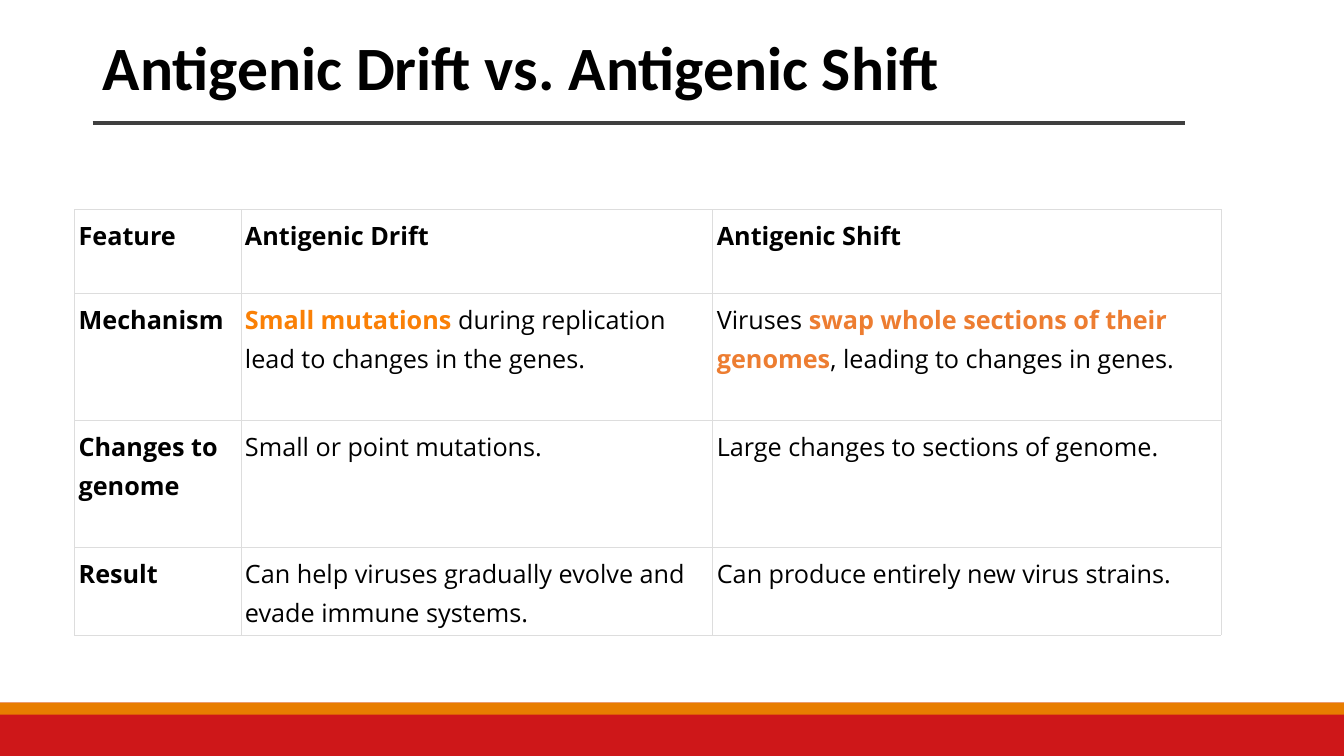
import pptx
import pptx.dml.color
import pptx.enum.shapes
import pptx.enum.text
import pptx.oxml.ns
import pptx.util
from lxml import etree

Inches, Pt = pptx.util.Inches, pptx.util.Pt
qn = pptx.oxml.ns.qn

# Content: a cell is a list of (text, bold, colour) runs
BLACK, ORANGE, AMBER = "000000", "ED7D31", "FA8006"
TITLE = "Antigenic Drift vs. Antigenic Shift"


def bold(text, color=BLACK):
    return text, True, color


def plain(text):
    return text, False, BLACK


ROWS = [
    [[bold("Feature")], [bold("Antigenic Drift")], [bold("Antigenic Shift")]],
    [[bold("Mechanism")],
     [bold("Small mutations ", AMBER),
      plain("during replication lead to changes in the genes.")],
     [plain("Viruses "), bold("swap whole sections of their genomes", ORANGE),
      plain(", leading to changes in genes.")]],
    [[bold("Changes to genome")],
     [plain("Small or point mutations.")],
     [plain("Large changes to sections of genome.")]],
    [[bold("Result")],
     [plain("Can help viruses gradually evolve and evade immune systems.")],
     [plain("Can produce entirely new virus strains.")]],
]
COL_WIDTHS = [1.65, 4.68, 5.04]
ROW_HEIGHTS = [0.83, 1.26, 1.26, 0.87]
# Footer bands: height, colour
BANDS = [(0.54, "CE1719"), (0.12, "E87D00")]


def rgb(color):
    return pptx.dml.color.RGBColor.from_string(color)


def add_run(p, text, size, font, is_bold, color):
    r = p.add_run()
    r.text = text
    r.font.size = Pt(size)
    r.font.name = font
    r.font.bold = is_bold
    r.font.color.rgb = rgb(color)


def add_borders(cell, color, width):
    tc_pr = cell._tc.get_or_add_tcPr()
    for side in ("a:lnL", "a:lnR", "a:lnT", "a:lnB"):
        ln = etree.SubElement(tc_pr, qn(side), w=str(Pt(width)))
        fill = etree.SubElement(ln, qn("a:solidFill"))
        etree.SubElement(fill, qn("a:srgbClr"), val=color)


prs = pptx.Presentation()
prs.slide_width, prs.slide_height = Inches(13.33), Inches(7.5)
s = prs.slides.add_slide(prs.slide_layouts[5])

# Footer bands
for height, color in BANDS:
    sp = s.shapes.add_shape(pptx.enum.shapes.MSO_SHAPE.RECTANGLE,
                            0, Inches(6.97), prs.slide_width, Inches(height))
    sp.shadow.inherit = False
    sp.fill.solid()
    sp.fill.fore_color.rgb = rgb(color)
    sp.line.fill.background()

# Rule under the title
rule = s.shapes.add_connector(pptx.enum.shapes.MSO_CONNECTOR.STRAIGHT,
                              Inches(0.92), Inches(1.22), Inches(11.75), Inches(1.22))
rule.line.color.rgb = rgb("3F3F3F")
rule.line.width = Pt(2.25)
etree.SubElement(rule._element.spPr, qn("a:effectLst"))

# Title
title = s.shapes.title
title.left, title.top = Inches(0.92), Inches(0.18)
title.width, title.height = Inches(11.5), Inches(1.05)
tf = title.text_frame
tf.word_wrap = True
tf.auto_size = pptx.enum.text.MSO_AUTO_SIZE.NONE
tf.vertical_anchor = pptx.enum.text.MSO_ANCHOR.MIDDLE
p = tf.paragraphs[0]
p.alignment = pptx.enum.text.PP_ALIGN.LEFT
p.line_spacing = 0.9
add_run(p, TITLE, 44, "Calibri", True, BLACK)

# Comparison table
table = s.shapes.add_table(len(ROWS), len(COL_WIDTHS), Inches(0.74), Inches(2.08),
                           Inches(sum(COL_WIDTHS)), Inches(sum(ROW_HEIGHTS))).table
for column, width in zip(table.columns, COL_WIDTHS):
    column.width = Inches(width)
for row, height, contents in zip(table.rows, ROW_HEIGHTS, ROWS):
    row.height = Inches(height)
    for cell, runs in zip(row.cells, contents):
        cell.margin_left = cell.margin_right = Inches(0.04)
        cell.margin_top = cell.margin_bottom = Inches(0.04)
        add_borders(cell, "DDDDDD", 0.75)
        cell.fill.solid()
        cell.fill.fore_color.rgb = rgb("FFFFFF")
        p = cell.text_frame.paragraphs[0]
        p.line_spacing = 1.15
        for text, is_bold, color in runs:
            add_run(p, text, 18, "Open Sans", is_bold, color)

prs.save("out.pptx")
